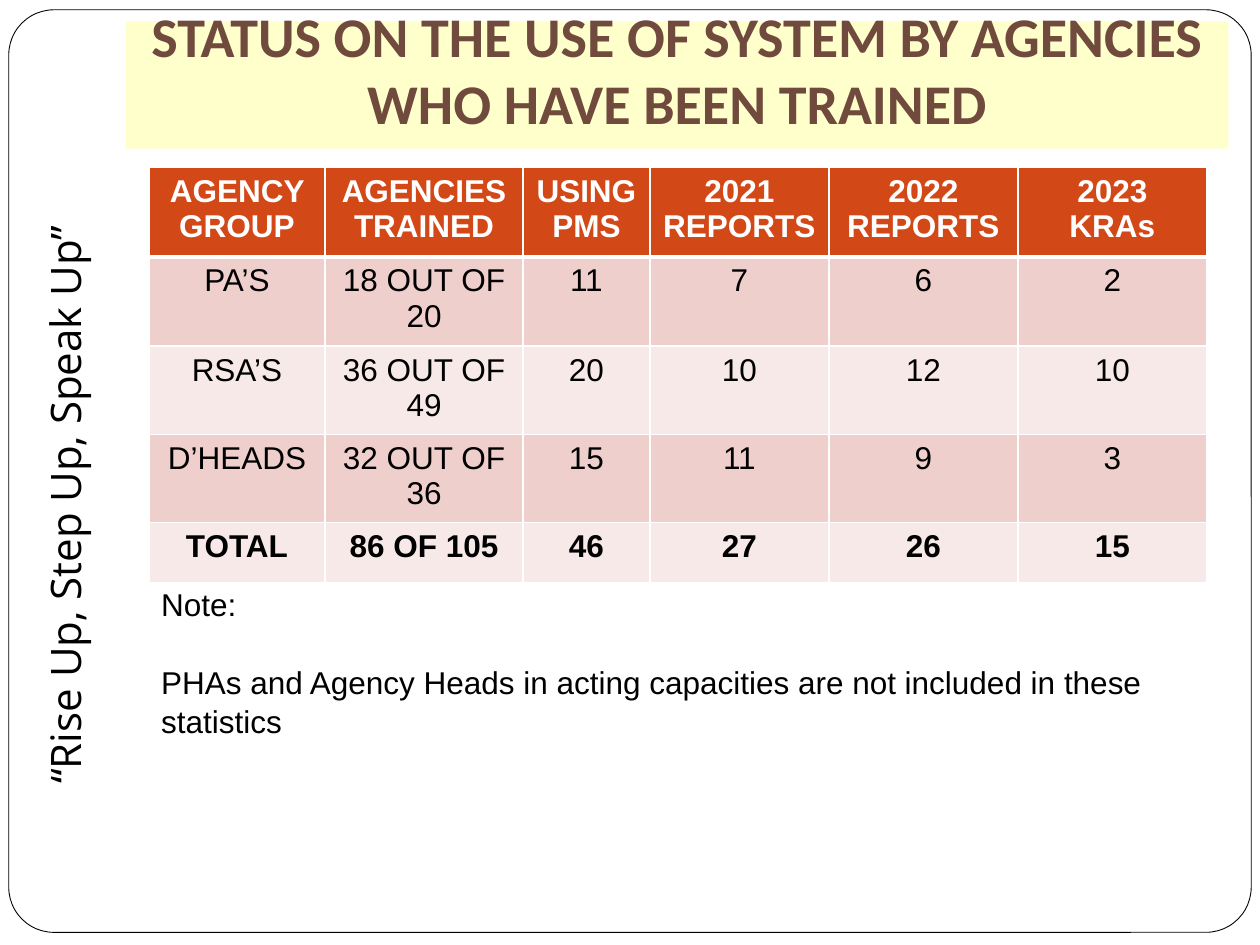
from lxml.etree import SubElement
from pptx import Presentation
from pptx.dml.color import RGBColor
from pptx.enum.shapes import MSO_SHAPE as Preset
from pptx.enum.text import MSO_ANCHOR as Anchor, MSO_AUTO_SIZE as AutoSize, PP_ALIGN as Align
from pptx.oxml.ns import qn
from pptx.util import Pt

BLACK = RGBColor(0x00, 0x00, 0x00)
WHITE = RGBColor(0xFF, 0xFF, 0xFF)
CREAM = RGBColor(0xFF, 0xFF, 0xCC)
BROWN = RGBColor(0x70, 0x4A, 0x3D)
ORANGE = RGBColor(0xD3, 0x48, 0x17)
ROSE = RGBColor(0xEF, 0xCF, 0xCC)
PALE_ROSE = RGBColor(0xF7, 0xE9, 0xE8)

TITLE_FORMAT = {"name": "Calibri", "size": Pt(32), "bold": True}
MOTTO_FORMAT = {"name": "Open Sans", "size": Pt(24), "bold": False}
PLAIN_FORMAT = {"name": "Arial", "size": Pt(18), "bold": False}
BOLD_FORMAT = {**PLAIN_FORMAT, "bold": True}

AGENCY_STATUS = [
    ["AGENCY GROUP", "AGENCIES TRAINED", "USING PMS", "2021 REPORTS", "2022 REPORTS", "2023 KRAs"],
    ["PA’S", "18 OUT OF 20", "11", "7", "6", "2"],
    ["RSA’S", "36 OUT OF 49", "20", "10", "12", "10"],
    ["D’HEADS", "32 OUT OF 36", "15", "11", "9", "3"],
    ["TOTAL", "86 OF 105", "46", "27", "26", "15"],
]
COLUMN_WIDTHS = [100.8, 113, 72.6, 102.2, 108, 108]
ROW_HEIGHTS = [51, 51, 48, 48, 34.5]


def points(*lengths):
    """Convert numbers to point lengths."""
    return [Pt(length) for length in lengths]


def write(paragraph, text, font_format, color, align):
    """Fill a paragraph with one formatted run."""
    paragraph.alignment = align
    run = paragraph.add_run()
    run.text = text
    for attribute, value in font_format.items():
        setattr(run.font, attribute, value)
    run.font.color.rgb = color


def add_page_frame(slide):
    """Draw the rounded page outline behind everything else."""
    outline = slide.shapes.add_shape(Preset.ROUNDED_RECTANGLE, *points(5, 5.6, 710, 527.2))
    outline.adjustments[0] = 0.049
    outline.shadow.inherit = False
    outline.fill.solid()
    outline.fill.fore_color.rgb = WHITE
    outline.line.color.rgb = BLACK
    outline.line.width = Pt(0.5)
    slide.shapes.element.insert(2, outline.element)


def add_heading(slide, text):
    """Place the title on its cream band."""
    heading = slide.shapes.title
    heading.left, heading.top, heading.width, heading.height = points(72, 12.2, 630, 72.7)
    heading.fill.solid()
    heading.fill.fore_color.rgb = CREAM
    frame_format = {
        "vertical_anchor": Anchor.BOTTOM,
        "auto_size": AutoSize.NONE,
        "word_wrap": True,
        "margin_bottom": Pt(7.2),
    }
    for attribute, value in frame_format.items():
        setattr(heading.text_frame, attribute, value)
    write(heading.text_frame.paragraphs[0], text, TITLE_FORMAT, BROWN, Align.CENTER)


def add_text(slide, box, texts, font_format, align, spacing=None, gap=0):
    """Add a wrapped text box with one paragraph per text."""
    text_box = slide.shapes.add_textbox(*points(*box))
    frame = text_box.text_frame
    frame.word_wrap = True
    for index, text in enumerate(texts):
        paragraph = frame.add_paragraph() if index else frame.paragraphs[0]
        paragraph.line_spacing = spacing
        if index:
            paragraph.space_before = Pt(gap)
        write(paragraph, text, font_format, BLACK, align)
    return text_box


def add_borders(cell, widths):
    """Draw white borders from a dict of side and width."""
    properties = cell._tc.get_or_add_tcPr()
    for position, (side, width) in enumerate(widths.items()):
        border = SubElement(properties, qn(f"a:ln{side}"), w=str(Pt(width)))
        fill = SubElement(border, qn("a:solidFill"))
        SubElement(fill, qn("a:srgbClr"), val=str(WHITE))
        properties.insert(position, border)


def add_status_table(slide, left, top):
    """Add the table of agency figures."""
    size = points(sum(COLUMN_WIDTHS), sum(ROW_HEIGHTS))
    table = slide.shapes.add_table(
        len(ROW_HEIGHTS), len(COLUMN_WIDTHS), Pt(left), Pt(top), *size
    ).table
    for column, width in zip(table.columns, COLUMN_WIDTHS):
        column.width = Pt(width)
    total_row = len(AGENCY_STATUS) - 1
    for row, (height, values) in enumerate(zip(ROW_HEIGHTS, AGENCY_STATUS)):
        table.rows[row].height = Pt(height)
        band = ORANGE if row == 0 else ROSE if row % 2 else PALE_ROSE
        font_format = BOLD_FORMAT if row in (0, total_row) else PLAIN_FORMAT
        color = BLACK if row else WHITE
        borders = {"L": 1, "R": 1, "T": 3 if row == 1 else 1, "B": 1 if row else 3}
        for column, value in enumerate(values):
            cell = table.cell(row, column)
            cell.fill.solid()
            cell.fill.fore_color.rgb = band
            add_borders(cell, borders)
            write(cell.text_frame.paragraphs[0], value, font_format, color, Align.CENTER)


def main():
    """Build the agency status slide."""
    deck = Presentation()
    deck.slide_width, deck.slide_height = points(720, 540)
    slide = deck.slides.add_slide(deck.slide_layouts.get_by_name("Title Only"))
    add_page_frame(slide)
    motto = add_text(slide, (-190.8, 270, 455.8, 36.7), ["“Rise Up, Step Up, Speak Up”"],
                     MOTTO_FORMAT, Align.CENTER)
    motto.rotation = 270
    add_heading(slide, "STATUS ON THE USE OF SYSTEM BY AGENCIES WHO HAVE BEEN TRAINED")
    add_status_table(slide, 85, 95.8)
    note = [
        "Note:",
        "PHAs and Agency Heads in acting capacities are not included in these statistics",
    ]
    add_text(slide, (85, 329.8, 617, 94.3), note, PLAIN_FORMAT, Align.LEFT, 1.05, 21.5)
    deck.save("out.pptx")


if __name__ == "__main__":
    main()
